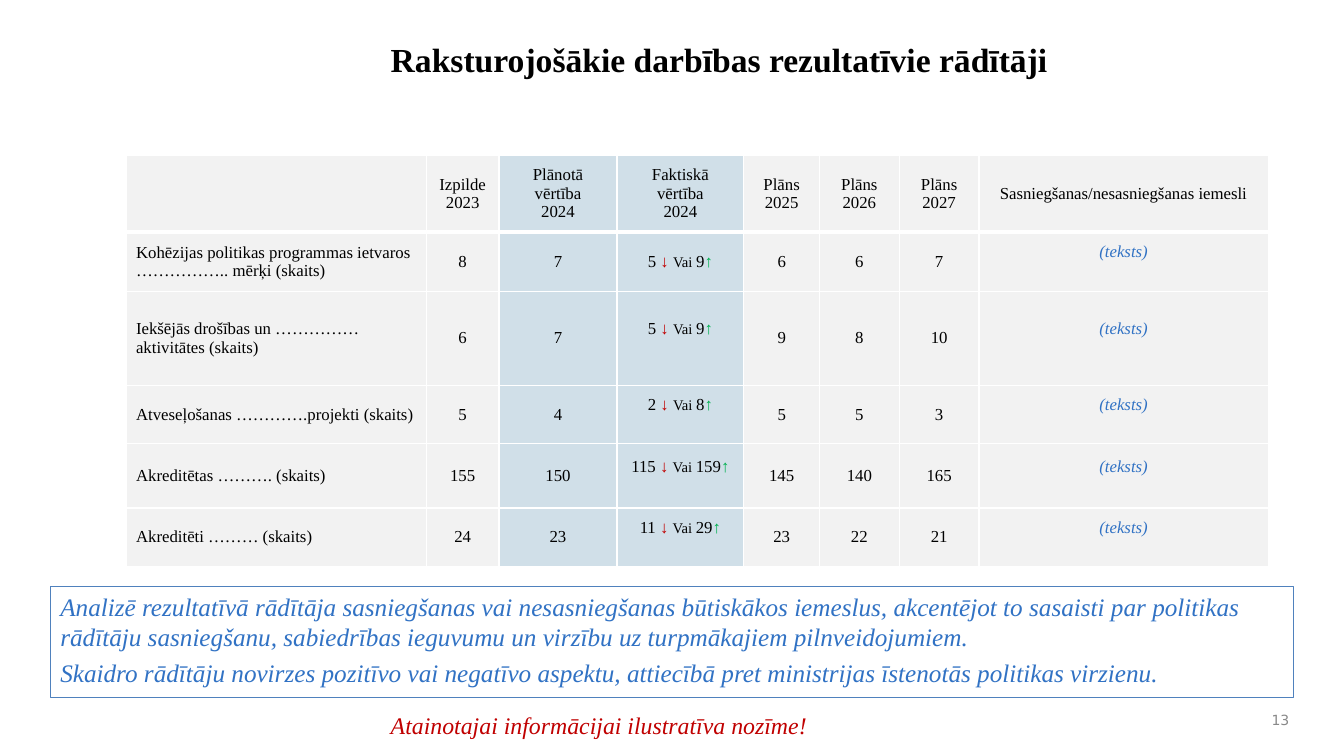
"""Build the slide with the table of performance indicators."""
from lxml import etree
from pptx import Presentation
from pptx.dml.color import RGBColor
from pptx.enum.text import MSO_ANCHOR, PP_ALIGN
from pptx.oxml.ns import qn
from pptx.util import Pt

BLACK = RGBColor(0x00, 0x00, 0x00)
WHITE = RGBColor(0xFF, 0xFF, 0xFF)
BLUE = RGBColor(0x31, 0x72, 0xC4)
FRAME = RGBColor(0x4F, 0x81, 0xBD)
RED = RGBColor(0xC0, 0x00, 0x00)
GREEN = RGBColor(0x00, 0xB0, 0x50)
GREY = RGBColor(0x89, 0x89, 0x89)
PALE_GREY = RGBColor(0xF2, 0xF2, 0xF2)
PALE_BLUE = RGBColor(0xD0, 0xDF, 0xE8)


def add_run(p, text, color=BLACK, **formats):
    """Add a run with the given font values."""
    r = p.add_run()
    r.text = text
    r.font.color.rgb = color
    values = {"name": "Times New Roman", "size": Pt(12), **formats}
    for name, value in values.items():
        setattr(r.font, name, value)


def add_border(cell, index, side, width):
    """Add a white border to one side of a cell."""
    ln = etree.Element(qn(f"a:ln{side}"), w=str(Pt(width)))
    fill = etree.SubElement(ln, qn("a:solidFill"))
    etree.SubElement(fill, qn("a:srgbClr"), val=str(WHITE))
    cell._tc.get_or_add_tcPr().insert(index, ln)


prs = Presentation()
prs.slide_width, prs.slide_height = Pt(960), Pt(540)
s = prs.slides.add_slide(prs.slide_layouts[6])

col_widths = [214.5, 52, 84.2, 90.7, 54, 57, 57, 206.6]
row_heights = [54.7, 42.5, 67, 41.8, 46, 41.8]
headers = [
    "", "Izpilde 2023", "Plānotā vērtība\n2024", "Faktiskā vērtība\n2024",
    "Plāns 2025", "Plāns 2026", "Plāns 2027",
    "Sasniegšanas/nesasniegšanas iemesli",
]
indicators = [
    ["Kohēzijas politikas programmas ietvaros …………….. mērķi (skaits)",
     "8", "7", ("5", "9"), "6", "6", "7", "(teksts)"],
    ["Iekšējās drošības un ……………aktivitātes (skaits)",
     "6", "7", ("5", "9"), "9", "8", "10", "(teksts)"],
    ["Atveseļošanas ………….projekti (skaits)",
     "5", "4", ("2", "8"), "5", "5", "3", "(teksts)"],
    ["Akreditētas ………. (skaits)",
     "155", "150", ("115", "159"), "145", "140", "165", "(teksts)"],
    ["Akreditēti ……… (skaits)",
     "24", "23", ("11", "29"), "23", "22", "21", "(teksts)"],
]
rows = [headers] + indicators

table = s.shapes.add_table(
    len(rows), len(headers), Pt(90), Pt(111), Pt(816), Pt(294)).table
for column, width in zip(table.columns, col_widths):
    column.width = Pt(width)
for row, height in zip(table.rows, row_heights):
    row.height = Pt(height)

for i, row in enumerate(rows):
    for j, value in enumerate(row):
        cell = table.cell(i, j)
        cell.vertical_anchor = MSO_ANCHOR.MIDDLE
        cell.fill.solid()
        cell.fill.fore_color.rgb = PALE_BLUE if j in (2, 3) else PALE_GREY
        for index, side in enumerate("LRTB"):
            add_border(cell, index, side, 3 if i == 0 and side == "B" else 1)
        if (i > 0 and j == 7) or (i > 1 and j == 3):
            cell.margin_bottom = Pt(17)
        tf = cell.text_frame
        if isinstance(value, tuple):
            lower, higher = value
            p = tf.paragraphs[0]
            p.alignment = PP_ALIGN.CENTER
            add_run(p, f"{lower} ")
            add_run(p, "↓ ", RED, bold=True)
            add_run(p, "Vai ", size=Pt(10.5))
            add_run(p, higher)
            add_run(p, "↑", GREEN, bold=True)
            continue
        is_reason = i > 0 and j == 7
        for n, line in enumerate(value.split("\n")):
            p = tf.add_paragraph() if n else tf.paragraphs[0]
            p.alignment = PP_ALIGN.LEFT if j == 0 else PP_ALIGN.CENTER
            if line:
                add_run(p, line, BLUE if is_reason else BLACK,
                        italic=is_reason)

texts = [
    ((272, 24, 640, 42), ["Raksturojošākie darbības rezultatīvie rādītāji"],
     BLACK, {"size": Pt(24), "bold": True}),
    ((36, 419, 888, 79.2),
     ["Analizē rezultatīvā rādītāja sasniegšanas vai nesasniegšanas "
      "būtiskākos iemeslus, akcentējot to sasaisti par politikas rādītāju "
      "sasniegšanu, sabiedrības ieguvumu un virzību uz turpmākajiem "
      "pilnveidojumiem.",
      "Skaidro rādītāju novirzes pozitīvo vai negatīvo aspektu, attiecībā "
      "pret ministrijas īstenotās politikas virzienu."],
     BLUE, {"size": Pt(18), "italic": True}),
    ((272, 504, 423, 24), ["Atainotajai informācijai ilustratīva nozīme!"],
     RED, {"size": Pt(17), "italic": True}),
    ((883, 502, 45, 24), ["13"], GREY,
     {"size": Pt(10), "name": "DejaVu Sans"}),
]
boxes = []
for place, lines, color, formats in texts:
    sp = s.shapes.add_textbox(*[Pt(v) for v in place])
    tf = sp.text_frame
    tf.word_wrap = True
    for n, line in enumerate(lines):
        p = tf.add_paragraph() if n else tf.paragraphs[0]
        if n:
            p.space_before = Pt(3.6)
        add_run(p, line, color, **formats)
    boxes.append(sp)

title, analysis, note, number = boxes
analysis.line.color.rgb = FRAME
analysis.line.width = Pt(0.75)
number.text_frame.vertical_anchor = MSO_ANCHOR.MIDDLE
number.text_frame.paragraphs[0].alignment = PP_ALIGN.RIGHT

prs.save("out.pptx")
